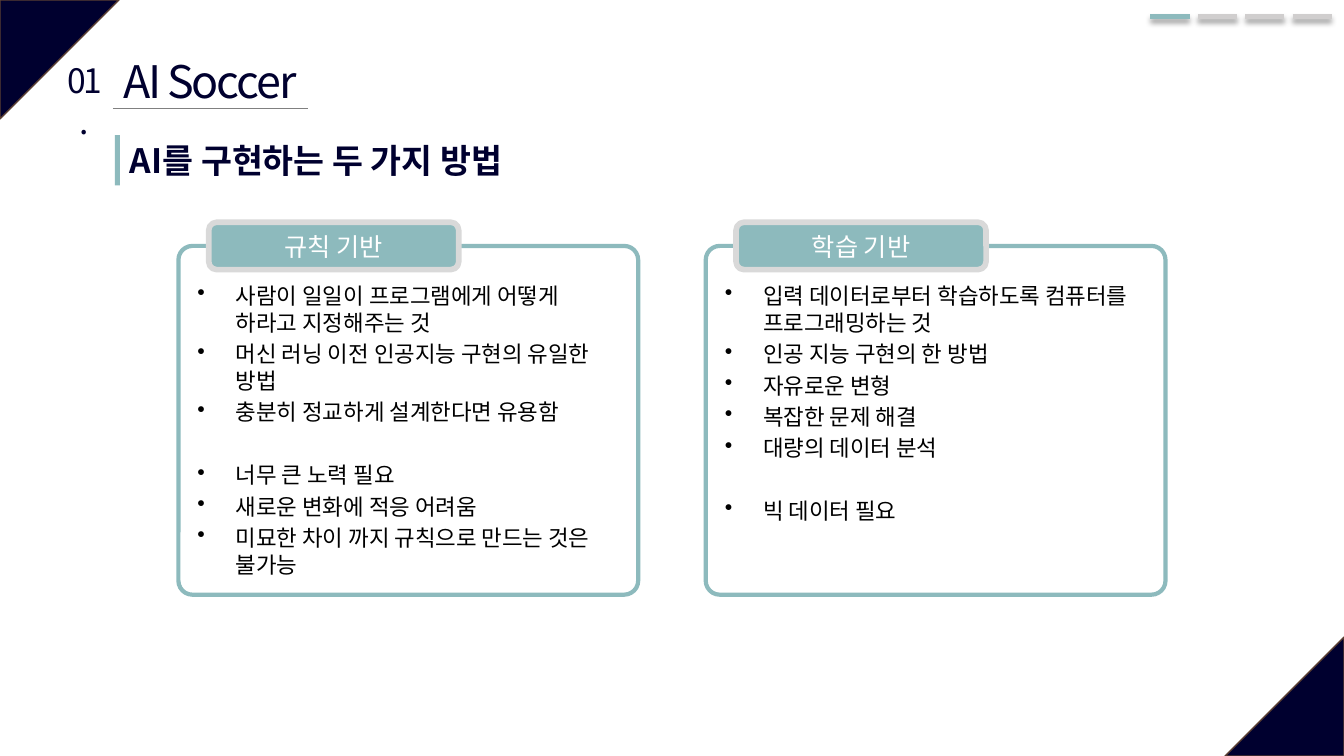
from lxml.etree import SubElement
from pptx import Presentation
from pptx.dml.color import RGBColor
from pptx.enum.shapes import MSO_CONNECTOR, MSO_SHAPE as SHAPE
from pptx.enum.text import MSO_ANCHOR as ANCHOR, PP_ALIGN as ALIGN
from pptx.oxml.ns import qn
from pptx.util import Inches, Pt

NUMBER, TITLE = "01.", "AI Soccer"
HEADING = "AI를 구현하는 두 가지 방법"
# Each method: name, then groups of points
METHODS = [
    ("규칙 기반", [
        ["사람이 일일이 프로그램에게 어떻게 하라고 지정해주는 것",
         "머신 러닝 이전 인공지능 구현의 유일한 방법",
         "충분히 정교하게 설계한다면 유용함"],
        ["너무 큰 노력 필요",
         "새로운 변화에 적응 어려움",
         "미묘한 차이 까지 규칙으로 만드는 것은 불가능"],
    ]),
    ("학습 기반", [
        ["입력 데이터로부터 학습하도록 컴퓨터를 프로그래밍하는 것",
         "인공 지능 구현의 한 방법",
         "자유로운 변형",
         "복잡한 문제 해결",
         "대량의 데이터 분석"],
        ["빅 데이터 필요"],
    ]),
]
SECTIONS, CURRENT = 4, 0

FONT = "Noto Sans CJK KR"
NAVY, TEAL, WHITE, BLACK = "00002F", "8DBABD", "FFFFFF", "000000"
BROWN, GREY, SILVER, PALE = "5B3F33", "808080", "D0CECE", "D9D9D9"

WIDTH, HEIGHT = 13.33, 7.5
CORNER = 1.18
CARD_LEFT, CARD_TOP, CARD_W, CARD_H, CARD_STEP = 1.77, 2.44, 4.56, 3.46, 5.23
TAB_INSET, TAB_W, TAB_H = 0.3, 2.48, 0.47
POINTS_INSET, POINTS_TOP, POINTS_H = 0.09, 2.75, 3.07
SECTION_LEFT, SECTION_TOP, SECTION_W, SECTION_STEP = 11.41, 0.16, 0.39, 0.47
LINE_RATIO, POINT_GAP, GROUP_GAP = 1.2, 3.2, 25.7

deck = Presentation()
deck.slide_width, deck.slide_height = Inches(WIDTH), Inches(HEIGHT)
slide = deck.slides.add_slide(deck.slide_layouts[6])


def color(hex_string):
    return RGBColor.from_string(hex_string)


def add_box(kind, left, top, width, height, fill=None, line=None, weight=1):
    box = slide.shapes.add_shape(
        kind, Inches(left), Inches(top), Inches(width), Inches(height))
    box.shadow.inherit = False
    if fill:
        box.fill.solid()
        box.fill.fore_color.rgb = color(fill)
    else:
        box.fill.background()
    if line:
        box.line.color.rgb = color(line)
        box.line.width = Pt(weight)
    else:
        box.line.fill.background()
    return box


def add_rule(left, top, width, line, weight, shadow=False):
    rule = slide.shapes.add_connector(
        MSO_CONNECTOR.STRAIGHT, Inches(left), Inches(top),
        Inches(left + width), Inches(top))
    rule.line.color.rgb = color(line)
    rule.line.width = Pt(weight)
    effects = SubElement(rule._element.spPr, qn("a:effectLst"))
    if shadow:
        outer = SubElement(effects, qn("a:outerShdw"), blurRad=str(Pt(4)),
                           dist=str(Pt(3)), dir="5400000", algn="t", rotWithShape="0")
        black = SubElement(outer, qn("a:srgbClr"), val=BLACK)
        SubElement(black, qn("a:alpha"), val="40000")


def add_text_frame(left, top, width, height, wrap):
    frame = slide.shapes.add_textbox(
        Inches(left), Inches(top), Inches(width), Inches(height)).text_frame
    frame.word_wrap = wrap
    return frame


def write(paragraph, text, size, ink, align=ALIGN.LEFT, bold=False, tracking=0):
    paragraph.text = text
    paragraph.alignment = align
    paragraph.line_spacing = Pt(size * LINE_RATIO)
    font = paragraph.font
    font.name, font.size, font.bold = FONT, Pt(size), bold
    font.color.rgb = color(ink)
    SubElement(font._element, qn("a:ea"), typeface=FONT)
    if tracking:
        font._element.set("spc", str(int(tracking * 100)))


def add_bullet(paragraph):
    """Give a written paragraph a hanging bullet."""
    properties = paragraph._p.get_or_add_pPr()
    properties.set("marL", str(Inches(0.38)))
    properties.set("indent", str(-Inches(0.38)))
    bullet = SubElement(properties, qn("a:buChar"), char="•")
    properties.find(qn("a:defRPr")).addprevious(bullet)


def add_points(frame, groups):
    paragraph = frame.paragraphs[0]
    for g, group in enumerate(groups):
        for i, point in enumerate(group):
            if g or i:
                paragraph = frame.add_paragraph()
            write(paragraph, point, 16, BLACK)
            add_bullet(paragraph)
            paragraph.space_before = Pt(GROUP_GAP if g and not i else POINT_GAP)


# Corners
for left, top, turn in [(0, 0, 90), (WIDTH - CORNER, HEIGHT - CORNER, 270)]:
    corner = add_box(SHAPE.ISOSCELES_TRIANGLE, left, top, CORNER, CORNER, NAVY, BROWN)
    corner.adjustments[0] = 0
    corner.rotation = turn

# Title
add_rule(1.12, 1.08, 1.93, GREY, 0.5)
write(add_text_frame(1.12, 0.48, 1.92, 0.64, False).paragraphs[0],
      TITLE, 32, NAVY, ALIGN.CENTER, tracking=-1.5)
write(add_text_frame(0.54, 0.55, 0.58, 0.5, True).paragraphs[0],
      NUMBER, 24, NAVY, ALIGN.CENTER, tracking=-1.5)

# Progress through the sections
for s in range(SECTIONS):
    add_rule(SECTION_LEFT + s * SECTION_STEP, SECTION_TOP, SECTION_W,
             TEAL if s == CURRENT else SILVER, 3.5, shadow=True)

# Heading
write(add_text_frame(1.19, 1.34, 4.39, 0.5, False).paragraphs[0],
      HEADING, 24, NAVY, bold=True)
add_box(SHAPE.RECTANGLE, 1.14, 1.34, 0.05, 0.5, TEAL)

# Method cards
for m, (method, groups) in enumerate(METHODS):
    left = CARD_LEFT + m * CARD_STEP
    card = add_box(SHAPE.ROUNDED_RECTANGLE, left, CARD_TOP, CARD_W, CARD_H,
                   line=TEAL, weight=3)
    card.adjustments[0] = 0.04
    tab = add_box(SHAPE.ROUNDED_RECTANGLE, left + TAB_INSET, CARD_TOP - TAB_H / 2,
                  TAB_W, TAB_H, TEAL, PALE, 4)
    tab.text_frame.vertical_anchor = ANCHOR.MIDDLE
    write(tab.text_frame.paragraphs[0], method, 18, WHITE, ALIGN.CENTER)
    add_points(add_text_frame(left + POINTS_INSET, POINTS_TOP,
                              CARD_W - 2 * POINTS_INSET, POINTS_H, True), groups)

deck.save("out.pptx")
